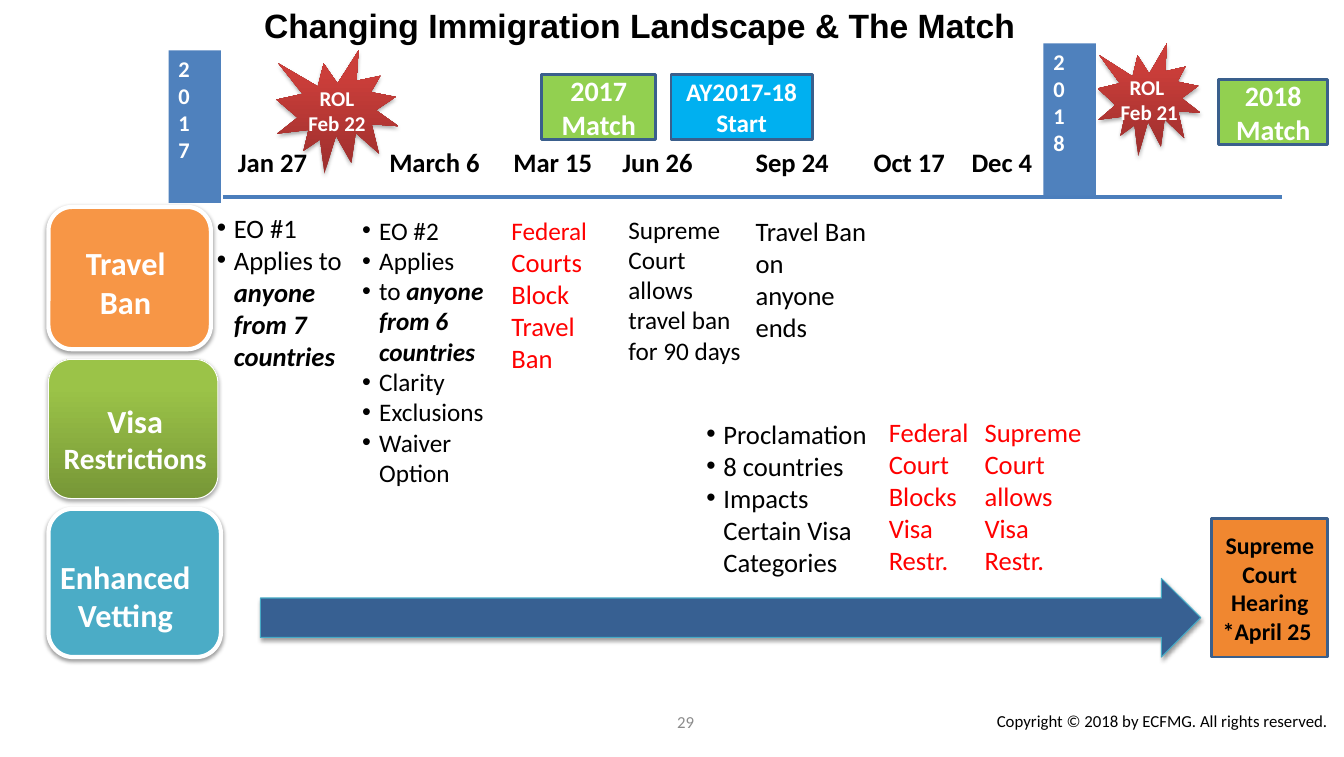
from dataclasses import dataclass

from lxml import etree
from pptx import Presentation
from pptx.dml.color import RGBColor
from pptx.enum.shapes import MSO_CONNECTOR, MSO_SHAPE
from pptx.enum.text import MSO_ANCHOR, PP_ALIGN
from pptx.oxml.ns import qn
from pptx.util import Inches, Pt

LEFT, CENTER, RIGHT = PP_ALIGN.LEFT, PP_ALIGN.CENTER, PP_ALIGN.RIGHT
TOP, MIDDLE = MSO_ANCHOR.TOP, MSO_ANCHOR.MIDDLE
RECTANGLE, ROUNDED = MSO_SHAPE.RECTANGLE, MSO_SHAPE.ROUNDED_RECTANGLE
STAR, ARROW = MSO_SHAPE.EXPLOSION1, MSO_SHAPE.RIGHT_ARROW
STRAIGHT = MSO_CONNECTOR.STRAIGHT

CELL = 0.1  # inches in one column or row of the grid
DEFAULT_INSETS, WIDE_INSETS = (1, 0.5), (1.3, 0.7)
EMPHASIS = {"bold": True, "italic": True}


@dataclass(frozen=True)
class Theme:
    body_font: str = "Calibri"
    title_font: str = "Arial"
    black: str = "000000"
    white: str = "FFFFFF"
    gray: str = "8C8C8C"
    red: str = "FF0000"
    year: str = "4F81BD"
    axis: str = "4B7EBC"
    border: str = "3A5F8C"
    match: str = "92D050"
    start: str = "00B0F0"
    hearing: str = "F08730"
    travel: str = "F79646"
    vetting: str = "4BACC6"
    arrow: str = "376092"
    arrow_line: str = "46AAC5"
    visa: tuple = ("779737", "9BC348")
    star: tuple = ("9C2F2D", "CB3E3A")
    title_size: int = 24
    topic_size: int = 23
    topic_small: int = 21
    match_size: int = 20
    body_size: int = 19
    compact_size: int = 18
    hearing_size: int = 17
    year_size: int = 16
    star_size: int = 15
    footer_size: int = 12


THEME = Theme()


def grid(*cells):
    return [Inches(cell * CELL) for cell in cells]


def add_bullet(paragraph):
    indent = Inches(0.17)
    properties = paragraph._p.get_or_add_pPr()
    properties.set("marL", str(indent))
    properties.set("indent", str(-indent))
    etree.SubElement(properties, qn("a:buFont")).set("typeface", "Arial")
    etree.SubElement(properties, qn("a:buChar")).set("char", "•")


def add_run(paragraph, text, color, font_format):
    """Add text in one format, with a line break at each newline."""
    for number, line in enumerate(text.split("\n")):
        if number:
            paragraph.add_line_break()
        run = paragraph.add_run()
        run.text = line
        for name, value in font_format.items():
            setattr(run.font, name, Pt(value) if name == "size" else value)
        run.font.color.rgb = RGBColor.from_string(color)


def write(shape, paragraphs, size, color, align=LEFT, anchor=TOP,
          insets=DEFAULT_INSETS, bullets=False, **font_format):
    """Fill a shape; a paragraph is a string or a list of (text, format) runs."""
    frame = shape.text_frame
    horizontal, vertical = grid(*insets)
    frame_format = {"word_wrap": True, "vertical_anchor": anchor,
                    "margin_left": horizontal, "margin_right": horizontal,
                    "margin_top": vertical, "margin_bottom": vertical}
    for name, value in frame_format.items():
        setattr(frame, name, value)
    base = {"name": THEME.body_font, "size": size, **font_format}
    for number, content in enumerate(paragraphs):
        paragraph = frame.add_paragraph() if number else frame.paragraphs[0]
        paragraph.alignment = align
        if bullets:
            add_bullet(paragraph)
        runs = [(content, {})] if isinstance(content, str) else content
        for text, changes in runs:
            add_run(paragraph, text, color, {**base, **changes})
    return shape


def add_text(slide, place, paragraphs, size=THEME.body_size, color=THEME.black, **options):
    return write(slide.shapes.add_textbox(*grid(*place)), paragraphs, size, color, **options)


def add_shadow(shape, distance, opacity):
    effects = shape._element.spPr.find(qn("a:effectLst"))
    shadow = etree.SubElement(effects, qn("a:outerShdw"), blurRad=str(Pt(3.1)),
                              dist=str(Pt(distance)), dir="5400000", rotWithShape="0")
    color = etree.SubElement(shadow, qn("a:srgbClr"), val=THEME.black)
    etree.SubElement(color, qn("a:alpha"), val=str(opacity * 1000))


def add_block(slide, kind, place, fill, line=None, line_width=2, shadow=None):
    """Add a preset shape; a pair of fill colours runs upwards as a gradient."""
    shape = slide.shapes.add_shape(kind, *grid(*place))
    if isinstance(fill, tuple):
        shape.fill.gradient()
        shape.fill.gradient_angle = 90
        for stop, color, position in zip(shape.fill.gradient_stops, fill, (0, 0.8)):
            stop.color.rgb = RGBColor.from_string(color)
            stop.position = position
    else:
        shape.fill.solid()
        shape.fill.fore_color.rgb = RGBColor.from_string(fill)
    if line:
        shape.line.color.rgb = RGBColor.from_string(line)
        shape.line.width = Pt(line_width)
    else:
        shape.line.fill.background()
    shape.shadow.inherit = False
    if shadow:
        add_shadow(shape, *shadow)
    return shape


def add_title(slide, text):
    title = slide.shapes.title
    title.left, title.top, title.width, title.height = grid(14.6, 0, 97.6, 5)
    write(title, [text], THEME.title_size, THEME.black, align=CENTER,
          bold=True, name=THEME.title_font)


def add_axis(slide):
    axis = slide.shapes.add_connector(STRAIGHT, *grid(22.1, 19.5, 127.1, 19.5))
    axis.line.color.rgb = RGBColor.from_string(THEME.axis)
    axis.line.width = Pt(3)
    etree.SubElement(axis._element.spPr, qn("a:effectLst"))


def add_star(slide, star_place, text_place, paragraphs):
    add_block(slide, STAR, star_place, THEME.star, shadow=(1.8, 35))
    add_text(slide, text_place, paragraphs, THEME.star_size, THEME.white,
             align=CENTER, bold=True)


def add_year(slide, left, top, year):
    bar = add_block(slide, RECTANGLE, (left, top, 5.2, 15.1), THEME.year)
    write(bar, [year], THEME.year_size, THEME.white, bold=True)
    bar.text_frame._txBody.bodyPr.set("vert", "wordArtVert")


def add_milestone(slide, place, fill, paragraphs, size, color=THEME.white,
                  insets=WIDE_INSETS):
    box = add_block(slide, RECTANGLE, place, fill, THEME.border)
    write(box, paragraphs, size, color, align=CENTER, anchor=MIDDLE,
          insets=insets, bold=True)


def add_topic(slide, place, text_place, fill, line_width, shadow, paragraph):
    add_block(slide, ROUNDED, place, fill, THEME.white, line_width, shadow)
    add_text(slide, text_place, [paragraph], THEME.topic_size, THEME.white,
             align=CENTER, bold=True)


def add_events(slide):
    compact = {"size": THEME.compact_size}
    add_text(slide, (20.5, 20.5, 17.5, 17.1),
             ["EO #1", [("Applies to ", {}), ("anyone\nfrom 7 countries", EMPHASIS)]],
             bullets=True)
    add_text(slide, (34.9, 20.8, 16.7, 28.3),
             ["EO #2", "Applies", [("to ", {}), ("anyone\nfrom 6 countries", EMPHASIS)],
              "Clarity", "Exclusions", "Waiver Option"], bullets=True, **compact)
    add_text(slide, (49.7, 20.7, 14, 17),
             [[("Federal", compact), (" Courts Block", {})], "Travel", "Ban"], color=THEME.red)
    add_text(slide, (61.3, 20.7, 16.6, 16.2),
             ["Supreme Court\nallows\ntravel ban\nfor 90 days"], **compact)
    add_text(slide, (73.9, 20.8, 13.1, 13.9), ["Travel Ban on anyone ends"])
    add_text(slide, (68.7, 40.7, 20.9, 17.5),
             ["Proclamation", "8 countries", "Impacts Certain Visa Categories"],
             insets=WIDE_INSETS, bullets=True)
    add_text(slide, (87.1, 40.7, 17.5, 17.1),
             ["Federal\nCourt\nBlocks\nVisa\nRestr."], color=THEME.red)
    add_text(slide, (96.6, 40.7, 17.9, 17.1),
             ["Supreme Court\nallows\nVisa", "Restr."], color=THEME.red)


def main():
    presentation = Presentation()
    presentation.slide_width, presentation.slide_height = grid(133.2, 75)
    slide = presentation.slides.add_slide(presentation.slide_layouts[5])
    add_title(slide, "Changing Immigration Landscape & The Match")

    add_star(slide, (27.4, 5, 12.1, 12.2), (29.2, 8, 8.4, 6.3), ["ROL", "Feb 22"])
    add_star(slide, (108.8, 4.3, 10.2, 11.2), (108.8, 6.9, 10.2, 6.1), ["ROL ", "Feb 21"])

    flat, raised = (1.6, 38), (1.8, 35)
    add_topic(slide, (4.8, 20.5, 16.1, 14.1), (5.7, 23.6, 13.5, 9),
              THEME.travel, 3, flat, "Travel Ban")
    add_topic(slide, (4.8, 35.6, 16.8, 13.8), (4.8, 39.3, 17.2, 8.4), THEME.visa, 0.75, raised,
              [("Visa ", {}), ("Restrictions", {"size": THEME.topic_small})])
    add_topic(slide, (4.8, 50.4, 17.1, 14.7), (2.5, 54.7, 20.6, 9),
              THEME.vetting, 3, flat, "Enhanced \nVetting ")
    add_block(slide, ARROW, (25.8, 57.3, 93.2, 7.8), THEME.arrow, THEME.arrow_line, 0.75, flat)

    add_axis(slide)
    dates = {"Jan 27": 22.6, "March 6": 37.6, "Mar 15": 49.9, "Jun 26": 60.7,
             "Sep 24": 73.9, "Oct 17": 85.6, "Dec 4": 95.3}
    for date, left in dates.items():
        add_text(slide, (left, 14, 11.1, 4.2), [date], bold=True)
    add_events(slide)

    add_year(slide, 16.7, 5, "2017")
    add_year(slide, 103.4, 4.3, "2018")
    add_milestone(slide, (53.7, 7.4, 11.3, 6.4), THEME.match, ["2017 Match"], THEME.match_size)
    add_milestone(slide, (66.5, 7.4, 14, 6.4), THEME.start,
                  ["AY2017-18", "Start"], THEME.compact_size)
    add_milestone(slide, (120.8, 7.9, 10.8, 6.4), THEME.match,
                  ["2018", "Match"], THEME.match_size)
    add_milestone(slide, (120.1, 51.4, 11.5, 13.7), THEME.hearing,
                  ["Supreme", "Court Hearing", "*April 25 "], THEME.hearing_size,
                  THEME.black, DEFAULT_INSETS)

    add_text(slide, (52.4, 69.5, 31.1, 4), ["29"], THEME.footer_size, THEME.gray,
             align=CENTER, anchor=MIDDLE)
    footer = add_text(slide, (56.6, 71.1, 75, 1.4),
                      ["Copyright © 2018 by ECFMG. All rights reserved."],
                      THEME.footer_size, align=RIGHT, insets=(0, 0))
    footer.text_frame.paragraphs[0].line_spacing = Pt(9.8)
    presentation.save("out.pptx")


if __name__ == "__main__":
    main()
